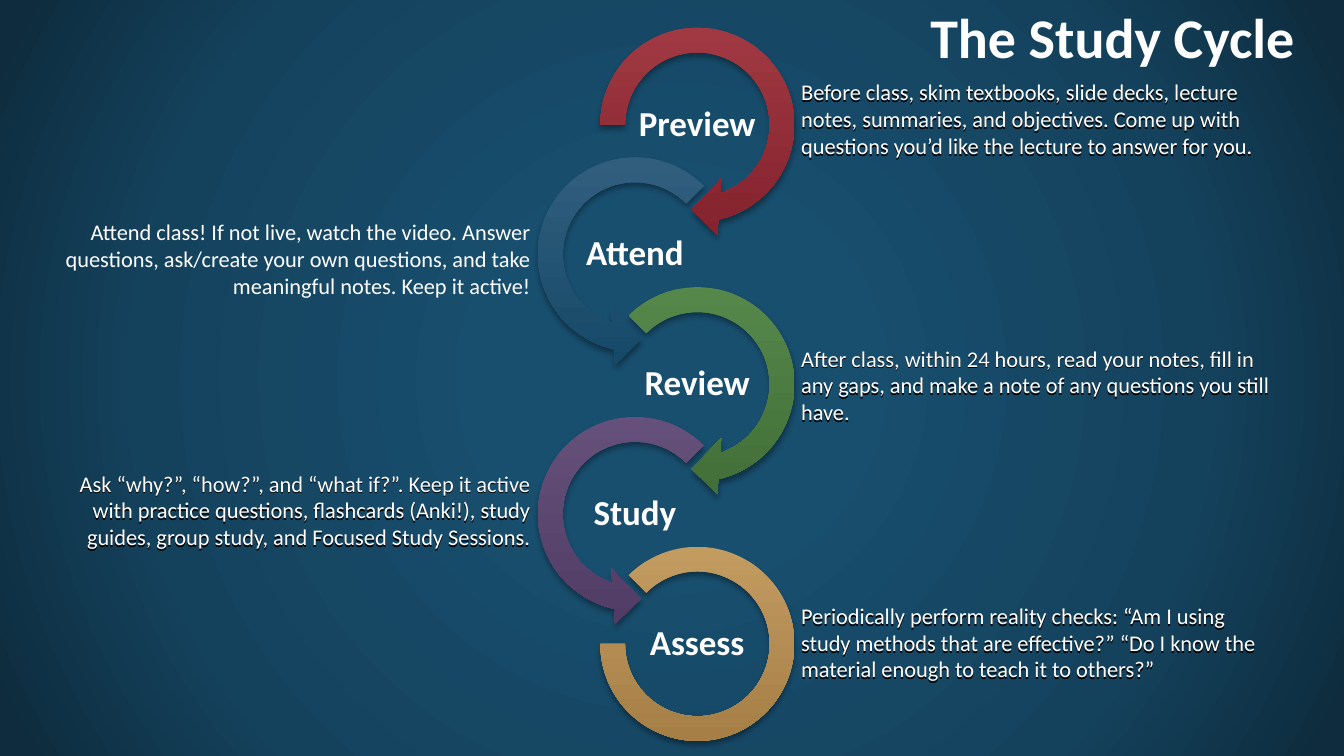
from pptx import Presentation
from pptx.dml.color import RGBColor
from pptx.enum.shapes import MSO_SHAPE
from pptx.enum.text import MSO_ANCHOR, PP_ALIGN
from pptx.oxml import parse_xml
from pptx.oxml.ns import nsdecls
from pptx.util import Cm, Pt

RIGHT, LEFT, MID = PP_ALIGN.RIGHT, PP_ALIGN.LEFT, PP_ALIGN.CENTER
CENTER = MSO_ANCHOR.MIDDLE
ARROW, BACK = MSO_SHAPE.CIRCULAR_ARROW, MSO_SHAPE.LEFT_CIRCULAR_ARROW
ARC = MSO_SHAPE.BLOCK_ARC

WHITE = RGBColor(0xFF, 0xFF, 0xFF)
BLACK = RGBColor(0x00, 0x00, 0x00)
RED = RGBColor(0xA2, 0x3B, 0x44), RGBColor(0x84, 0x22, 0x2D)
BLUE = RGBColor(0x34, 0x60, 0x80), RGBColor(0x16, 0x49, 0x67)
GREEN = RGBColor(0x57, 0x89, 0x4D), RGBColor(0x41, 0x6F, 0x37)
PURPLE = RGBColor(0x67, 0x52, 0x7D), RGBColor(0x50, 0x3C, 0x64)
GOLD = RGBColor(0xC2, 0x9B, 0x61), RGBColor(0xA5, 0x7F, 0x46)
NAVY = [
    (0, RGBColor(0x18, 0x4E, 0x6E)),
    (23, RGBColor(0x18, 0x4E, 0x6E)),
    (69, RGBColor(0x14, 0x42, 0x5D)),
    (97, RGBColor(0x0E, 0x2C, 0x3E)),
]

# Ring geometry in cm
TOP, STEP, SIZE, INSET = 0.3, 3.27, 5.69, 0.4

# Name, shape, adjustments, colours, note top, note shade, note
STEPS = [
    ("Preview", ARROW, (0.11, 11.423, 45, 108, 0.125), RED, 1.85, True,
     "Before class, skim textbooks, slide decks, lecture notes, summaries, "
     "and objectives. Come up with questions you’d like the lecture to "
     "answer for you."),
    ("Attend", BACK, (0.11, 11.423, 63, 189, 0.125), BLUE, 5.38, False,
     "Attend class! If not live, watch the video. Answer questions, "
     "ask/create your own questions, and take meaningful notes. "
     "Keep it active!"),
    ("Review", ARROW, (0.11, 11.423, 45, 135, 0.125), GREEN, 8.56, True,
     "After class, within 24 hours, read your notes, fill in any gaps, and "
     "make a note of any questions you still have."),
    ("Study", BACK, (0.11, 11.423, 63, 189, 0.125), PURPLE, 11.71, True,
     "Ask “why?”, “how?”, and “what if?”. Keep it active with practice "
     "questions, flashcards (Anki!), study guides, group study, and "
     "Focused Study Sessions."),
    ("Assess", ARC, (135, 108, 0.127), GOLD, 15.04, True,
     "Periodically perform reality checks: “Am I using study methods that "
     "are effective?” “Do I know the material enough to teach it to "
     "others?”"),
]


def write(frame, text, size, color, align, bold=False):
    frame.word_wrap = True
    para = frame.paragraphs[0]
    para.alignment = align
    run = para.add_run()
    run.text = text
    font = run.font
    font.name, font.size, font.bold = "Calibri", Pt(size), bold
    font.color.rgb = color
    return para


def add_ring(kind, x, y, size, turns, colors):
    ring = slide.shapes.add_shape(kind, Cm(x), Cm(y), Cm(size), Cm(size))
    for i, turn in enumerate(turns):
        ring.adjustments[i] = turn
    ring.fill.gradient()
    ring.fill.gradient_angle = 270
    for stop, color in zip(ring.fill.gradient_stops, colors):
        stop.color.rgb = color
    ring.line.fill.background()
    ring._element.spPr.append(parse_xml(
        f'<a:effectLst {nsdecls("a")}>'
        f'<a:outerShdw blurRad="{Pt(4)}" dist="{Pt(3)}" dir="5400000" '
        'rotWithShape="0"><a:srgbClr val="000000"><a:alpha val="35000"/>'
        '</a:srgbClr></a:outerShdw></a:effectLst>'))


deck = Presentation()
deck.slide_width, deck.slide_height = Cm(33.87), Cm(19.05)
slide = deck.slides.add_slide(deck.slide_layouts[5])

# Background glow
stops = "".join(
    f'<a:gs pos="{pos * 1000}"><a:srgbClr val="{color}"/></a:gs>'
    for pos, color in NAVY)
slide._element.cSld.insert(0, parse_xml(
    f'<p:bg {nsdecls("p", "a")}><p:bgPr><a:gradFill rotWithShape="1">'
    f'<a:gsLst>{stops}</a:gsLst><a:path path="circle">'
    '<a:fillToRect l="50000" t="50000" r="50000" b="50000"/></a:path>'
    '</a:gradFill><a:effectLst/></p:bgPr></p:bg>'))

# Title
title = slide.shapes.title
title.left, title.top = Cm(23.19), Cm(-0.08)
title.width, title.height = Cm(10.21), Cm(1.96)
write(title.text_frame, "The Study Cycle", 40, WHITE, LEFT, True)

# Rings with their labels and notes
for i, (name, kind, turns, colors, high, shade, note) in enumerate(STEPS):
    even = i % 2 == 0
    x, y = 14.73 if even else 13.16, TOP + i * STEP
    gap = INSET if kind == ARC else 0
    add_ring(kind, x + gap, y + gap, SIZE - 2 * gap, turns, colors)

    label = slide.shapes.add_textbox(
        Cm(x + 1.25), Cm(y + 2.06), Cm(3.18), Cm(1.57))
    frame = label.text_frame
    frame.margin_left = frame.margin_right = Cm(0.05)
    frame.margin_top = frame.margin_bottom = Cm(0.05)
    frame.vertical_anchor = CENTER
    write(frame, name, 25, WHITE, MID, True).line_spacing = 0.9

    # A black layer just below the white one shades the note
    layers = [(0.05, BLACK), (0, WHITE)] if shade else [(0, WHITE)]
    for drop, color in layers:
        box = slide.shapes.add_textbox(
            Cm(19.94 if even else 1.3), Cm(high + drop), Cm(12.32), Cm(2.31))
        write(box.text_frame, note, 16, color, LEFT if even else RIGHT)

deck.save("out.pptx")
